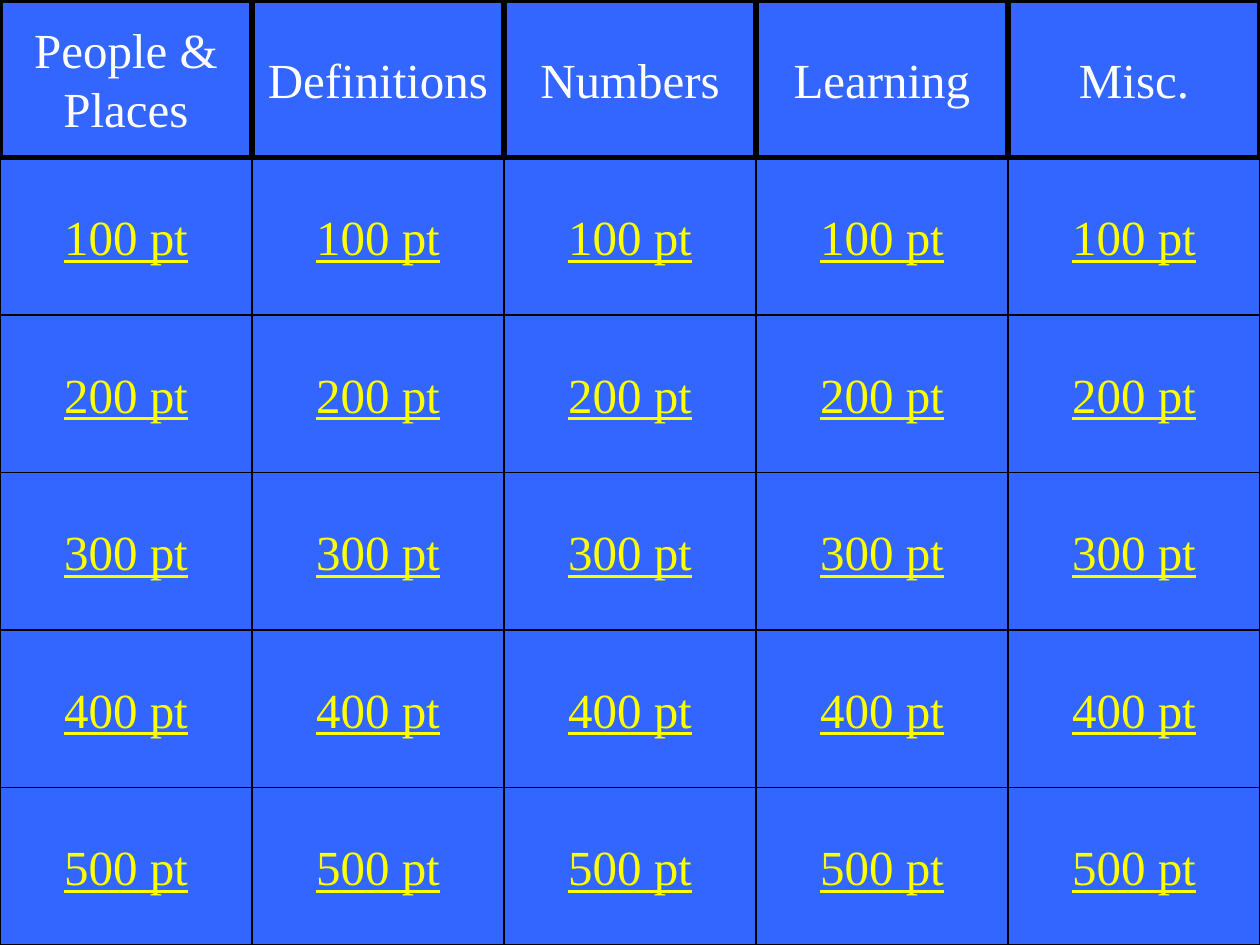
from pptx import Presentation
from pptx import util as u
from pptx.dml.color import RGBColor
from pptx.enum import shapes, text

COLORS = {"board": "3366FF", "border": "000000", "category": "FFFFFF", "points": "FFFF00"}
FONT = "Times New Roman"
FONT_SIZE = 28
PX_PER_INCH = 126
BOARD_WIDTH, BOARD_HEIGHT = 1260, 945
CATEGORIES = ["People &\nPlaces", "Definitions", "Numbers", "Learning", "Misc."]
POINTS = [100, 200, 300, 400, 500]


def px(length):
    return u.Emu(round(length * u.Inches(1) / PX_PER_INCH))


CELL_WIDTH = px(BOARD_WIDTH) // len(CATEGORIES)
CELL_HEIGHT = px(BOARD_HEIGHT) // (len(POINTS) + 1)


def color(name):
    return RGBColor.from_string(COLORS[name])


def add_cell(page, preset, column, row, label, text_color, border, underline=False):
    box = page.shapes.add_shape(
        preset, column * CELL_WIDTH, row * CELL_HEIGHT, CELL_WIDTH, CELL_HEIGHT
    )
    box.shadow.inherit = False
    box.fill.solid()
    box.fill.fore_color.rgb = color("board")
    box.line.color.rgb = color("border")
    box.line.width = u.Pt(border)
    frame = box.text_frame
    frame.text = label
    frame.word_wrap = False
    frame.vertical_anchor = text.MSO_ANCHOR.MIDDLE
    for para in frame.paragraphs:
        para.alignment = text.PP_ALIGN.CENTER
        for span in para.runs:
            span.font.name = FONT
            span.font.size = u.Pt(FONT_SIZE)
            span.font.color.rgb = color(text_color)
            span.font.underline = underline


def add_points_button(page, column, row, points):
    preset = shapes.MSO_SHAPE.ACTION_BUTTON_CUSTOM
    add_cell(page, preset, column, row, f"{points} pt", "points", 0.75, underline=True)


def add_category(page, column, name):
    add_cell(page, shapes.MSO_SHAPE.RECTANGLE, column, 0, name, "category", 3)


def main():
    deck = Presentation()
    deck.slide_width = px(BOARD_WIDTH)
    deck.slide_height = px(BOARD_HEIGHT)
    page = deck.slides.add_slide(deck.slide_layouts[6])
    page.background.fill.solid()
    page.background.fill.fore_color.rgb = color("board")
    for column in range(len(CATEGORIES)):
        for row, points in enumerate(POINTS, start=1):
            add_points_button(page, column, row, points)
    for column, name in enumerate(CATEGORIES):
        add_category(page, column, name)
    deck.save("out.pptx")


if __name__ == "__main__":
    main()
